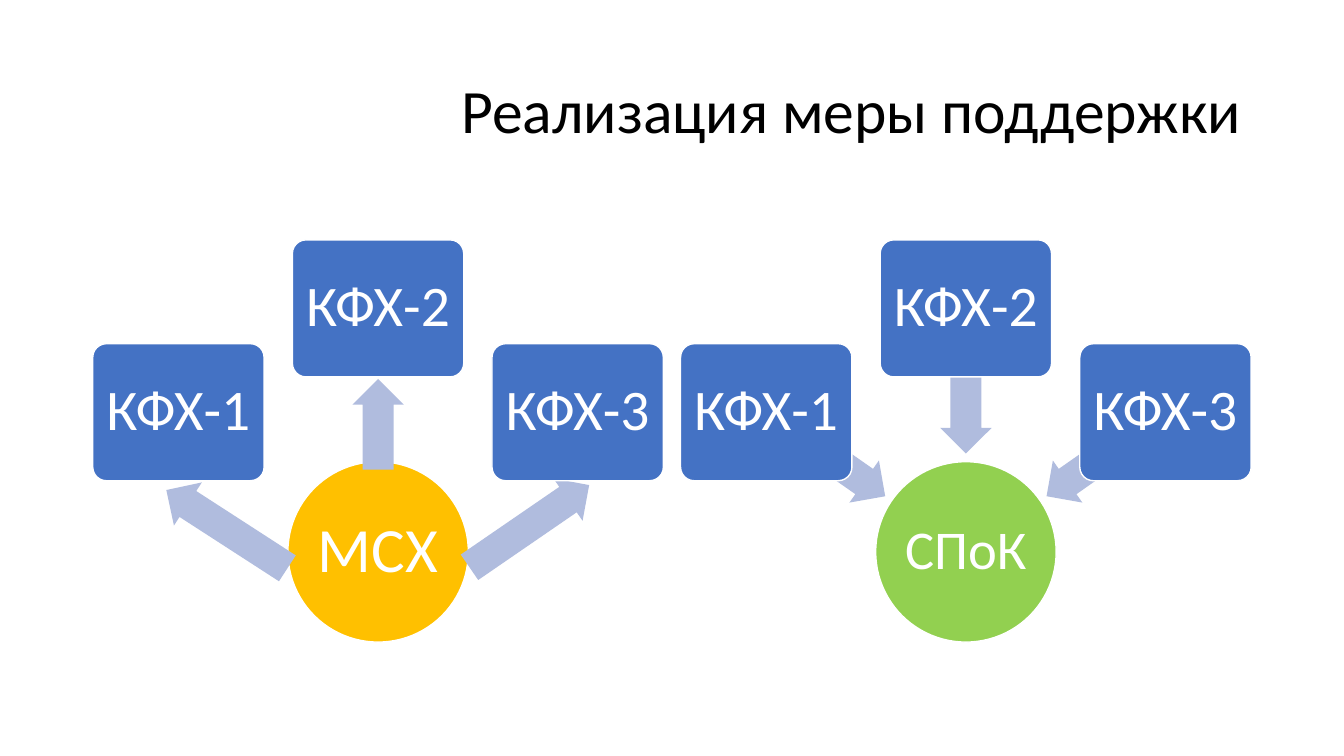
from pptx import Presentation
from pptx.dml.color import RGBColor
from pptx.enum.shapes import MSO_SHAPE
from pptx.enum.text import MSO_ANCHOR, PP_ALIGN
from pptx.util import Inches, Pt

WHITE = RGBColor(0xFF, 0xFF, 0xFF)
BLACK = RGBColor(0x00, 0x00, 0x00)
FARM_BLUE = RGBColor(0x44, 0x72, 0xC4)
ARROW_BLUE = RGBColor(0xB0, 0xBC, 0xDE)
MINISTRY_AMBER = RGBColor(0xFF, 0xC0, 0x00)
COOPERATIVE_GREEN = RGBColor(0x92, 0xD0, 0x50)

FARM_WIDTH, FARM_HEIGHT, FARM_STEP = 1.7, 1.36, 1.98
FARM_DROPS = (1.03, 0, 1.03)
HUB_SIZE, HUB_TOP = 1.79, 2.2
ARROW_HEIGHT = 0.51

# Each arrow: centre x, centre y, length (inches within the diagram), rotation.
ARROWS_FROM_MINISTRY = (
    (1.33, 2.87, 1.43, 32.9),
    (2.83, 1.83, 0.9, 90),
    (4.33, 2.84, 1.44, 145.5),
)
ARROWS_TO_COOPERATIVE = (
    (1.44, 2.13, 1.44, 215),
    (2.83, 1.4, 1.44, 270),
    (4.22, 2.13, 1.44, 325),
)


def write(frame, text, size, color, align):
    frame.vertical_anchor = MSO_ANCHOR.MIDDLE
    paragraph = frame.paragraphs[0]
    paragraph.text = text
    paragraph.alignment = align
    paragraph.line_spacing = 0.9
    paragraph.font.name = "Calibri"
    paragraph.font.size = Pt(size)
    paragraph.font.color.rgb = color


def add_title(slide, left, top, width, height):
    title = slide.shapes.add_textbox(
        Inches(left), Inches(top), Inches(width), Inches(height))
    title.text_frame.word_wrap = True
    write(title.text_frame, "Реализация меры поддержки", 44, BLACK, PP_ALIGN.RIGHT)


def add_filled(slide, preset, left, top, width, height, color):
    shape = slide.shapes.add_shape(
        preset, Inches(left), Inches(top), Inches(width), Inches(height))
    shape.shadow.inherit = False
    shape.fill.solid()
    shape.fill.fore_color.rgb = color
    shape.line.fill.background()
    return shape


def add_node(slide, preset, left, top, width, height, color, text, size):
    """Add a white-edged shape with a centred label."""
    node = add_filled(slide, preset, left, top, width, height, color)
    node.line.color.rgb = WHITE
    node.line.width = Pt(1)
    node.text_frame.word_wrap = False
    write(node.text_frame, text, size, WHITE, PP_ALIGN.CENTER)
    return node


def add_arrow(slide, center_x, center_y, length, rotation):
    arrow = add_filled(
        slide, MSO_SHAPE.LEFT_ARROW, center_x - length / 2,
        center_y - ARROW_HEIGHT / 2, length, ARROW_HEIGHT, ARROW_BLUE)
    arrow.adjustments[0] = 0.6
    arrow.adjustments[1] = 0.5
    arrow.rotation = rotation


def add_farm_diagram(slide, left, top, hub_text, hub_size, hub_color, arrows):
    """Place a hub under three farms, with one arrow between it and each."""
    hub_left = left + FARM_STEP + (FARM_WIDTH - HUB_SIZE) / 2
    add_node(slide, MSO_SHAPE.OVAL, hub_left, top + HUB_TOP, HUB_SIZE, HUB_SIZE,
             hub_color, hub_text, hub_size)
    for index, (drop, arrow) in enumerate(zip(FARM_DROPS, arrows)):
        arrow_x, arrow_y, length, rotation = arrow
        add_arrow(slide, left + arrow_x, top + arrow_y, length, rotation)
        farm = add_node(
            slide, MSO_SHAPE.ROUNDED_RECTANGLE, left + index * FARM_STEP, top + drop,
            FARM_WIDTH, FARM_HEIGHT, FARM_BLUE, f"КФХ-{index + 1}", 41)
        farm.adjustments[0] = 0.1


def main():
    presentation = Presentation()
    presentation.slide_width = Inches(13.33)
    presentation.slide_height = Inches(7.5)
    slide = presentation.slides.add_slide(presentation.slide_layouts[6])
    add_title(slide, 0.92, 0.4, 11.5, 1.45)
    add_farm_diagram(slide, 0.92, 2.38, "МСХ", 45, MINISTRY_AMBER,
                     ARROWS_FROM_MINISTRY)
    add_farm_diagram(slide, 6.75, 2.38, "СПоК", 39, COOPERATIVE_GREEN,
                     ARROWS_TO_COOPERATIVE)
    presentation.save("out.pptx")


if __name__ == "__main__":
    main()
